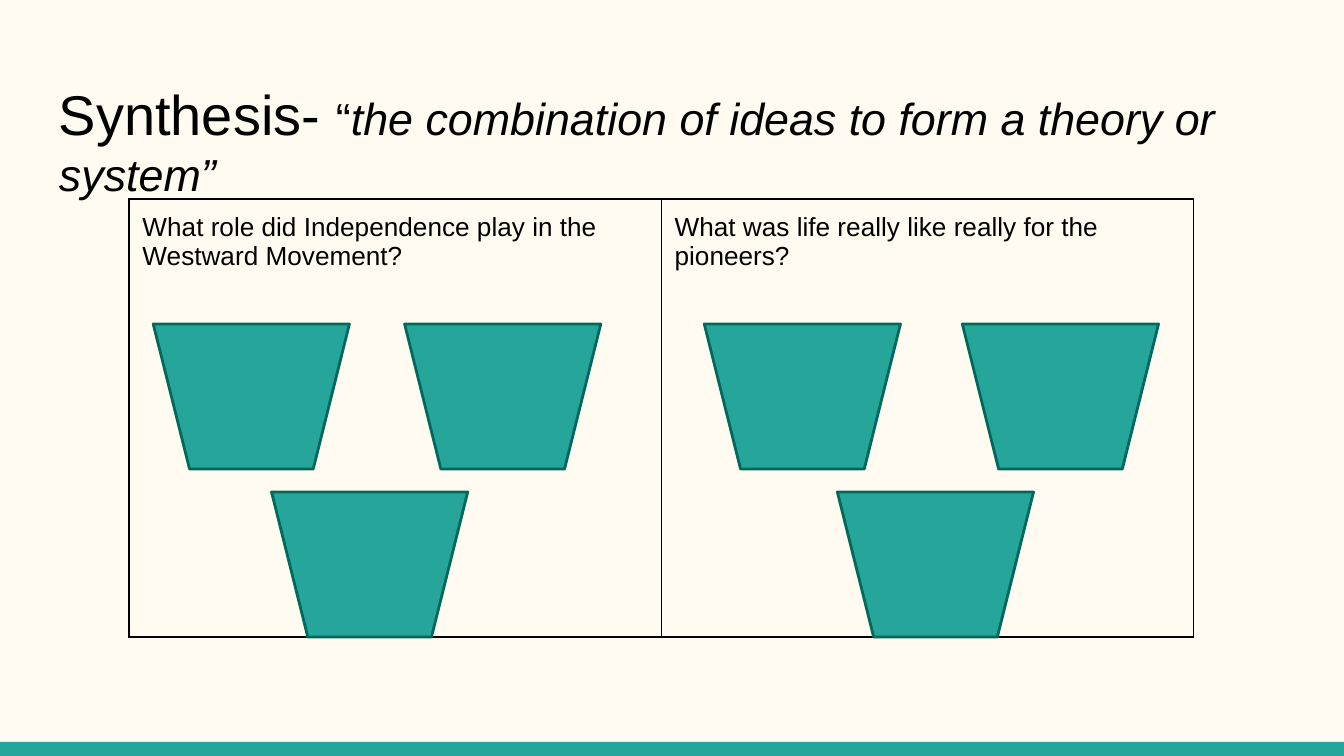
from lxml.etree import SubElement
from pptx import Presentation
from pptx.dml.color import RGBColor
from pptx.enum.shapes import MSO_SHAPE as Shape
from pptx.enum.text import MSO_ANCHOR as Anchor
from pptx.oxml.ns import qn
from pptx.util import Inches, Pt

COLORS = {"cream": "FFFBF0", "teal": "26A69A", "dark_teal": "00695C", "black": "000000"}
FONT = "Arial"
INSET = 0.1
WIDTH = 10
HEIGHT = WIDTH * 9 / 16


def color(name):
    return RGBColor.from_string(COLORS[name])


class SlideBuilder:
    def __init__(self, page):
        self.page = page
        page.background.fill.solid()
        page.background.fill.fore_color.rgb = color("cream")

    def shape(self, kind, left, top, width, height, line=None):
        shape = self.page.shapes.add_shape(
            kind, Inches(left), Inches(top), Inches(width), Inches(height))
        shape.shadow.inherit = False
        shape.fill.solid()
        shape.fill.fore_color.rgb = color("teal")
        if line:
            shape.line.color.rgb = color(line)
            shape.line.width = Pt(1.5)
        else:
            shape.line.fill.background()
        return shape

    def bucket(self, left, top):
        bucket = self.shape(Shape.TRAPEZOID, left, top, 1.46, 1.08, "dark_teal")
        bucket.adjustments[0] = 0.25
        bucket.rotation = 180

    def span(self, para, text, size, italic=False):
        span = para.add_run()
        span.text = text
        span.font.name = FONT
        span.font.size = Pt(size)
        span.font.italic = italic
        span.font.color.rgb = color("black")

    def inset(self, holder):
        holder.margin_left = holder.margin_right = Inches(INSET)
        holder.margin_top = holder.margin_bottom = Inches(INSET)
        holder.vertical_anchor = Anchor.TOP

    def title(self, left, top, width, height, spans):
        box = self.page.shapes.add_textbox(
            Inches(left), Inches(top), Inches(width), Inches(height))
        frame = box.text_frame
        frame.word_wrap = True
        self.inset(frame)
        para = frame.paragraphs[0]
        for text, size, italic in spans:
            self.span(para, text, size, italic)

    def borders(self, cell):
        properties = cell._tc.get_or_add_tcPr()
        for position, side in enumerate(("lnL", "lnR", "lnT", "lnB")):
            line = SubElement(properties, qn(f"a:{side}"), w=str(Pt(0.75)))
            fill = SubElement(line, qn("a:solidFill"))
            SubElement(fill, qn("a:srgbClr"), val=COLORS["black"])
            properties.insert(position, line)

    def question_table(self, left, top, width, height, questions):
        table = self.page.shapes.add_table(
            1, len(questions), Inches(left), Inches(top),
            Inches(width), Inches(height)).table
        table.first_row = table.horz_banding = False
        for cell, question in zip(table.iter_cells(), questions):
            cell.fill.background()
            self.inset(cell)
            self.span(cell.text_frame.paragraphs[0], question, 14)
            self.borders(cell)


def main():
    deck = Presentation()
    deck.slide_width, deck.slide_height = Inches(WIDTH), Inches(HEIGHT)
    builder = SlideBuilder(deck.slides.add_slide(deck.slide_layouts[6]))
    builder.shape(Shape.RECTANGLE, 0, 5.52, WIDTH, 0.11)
    builder.title(0.34, 0.49, 9.32, 0.67, [
        ("Synthesis- ", 30, False),
        ("“", 24, False),
        ("the combination of ideas to form a theory or system”", 24, True),
    ])
    builder.question_table(0.96, 1.48, 7.92, 3.26, [
        "What role did Independence play in the Westward Movement?",
        "What was life really like really for the pioneers?",
    ])
    bucket_rows = {2.41: (1.14, 3.01, 5.24, 7.16), 3.66: (2.02, 6.23)}
    for top, lefts in bucket_rows.items():
        for left in lefts:
            builder.bucket(left, top)
    deck.save("out.pptx")


if __name__ == "__main__":
    main()
